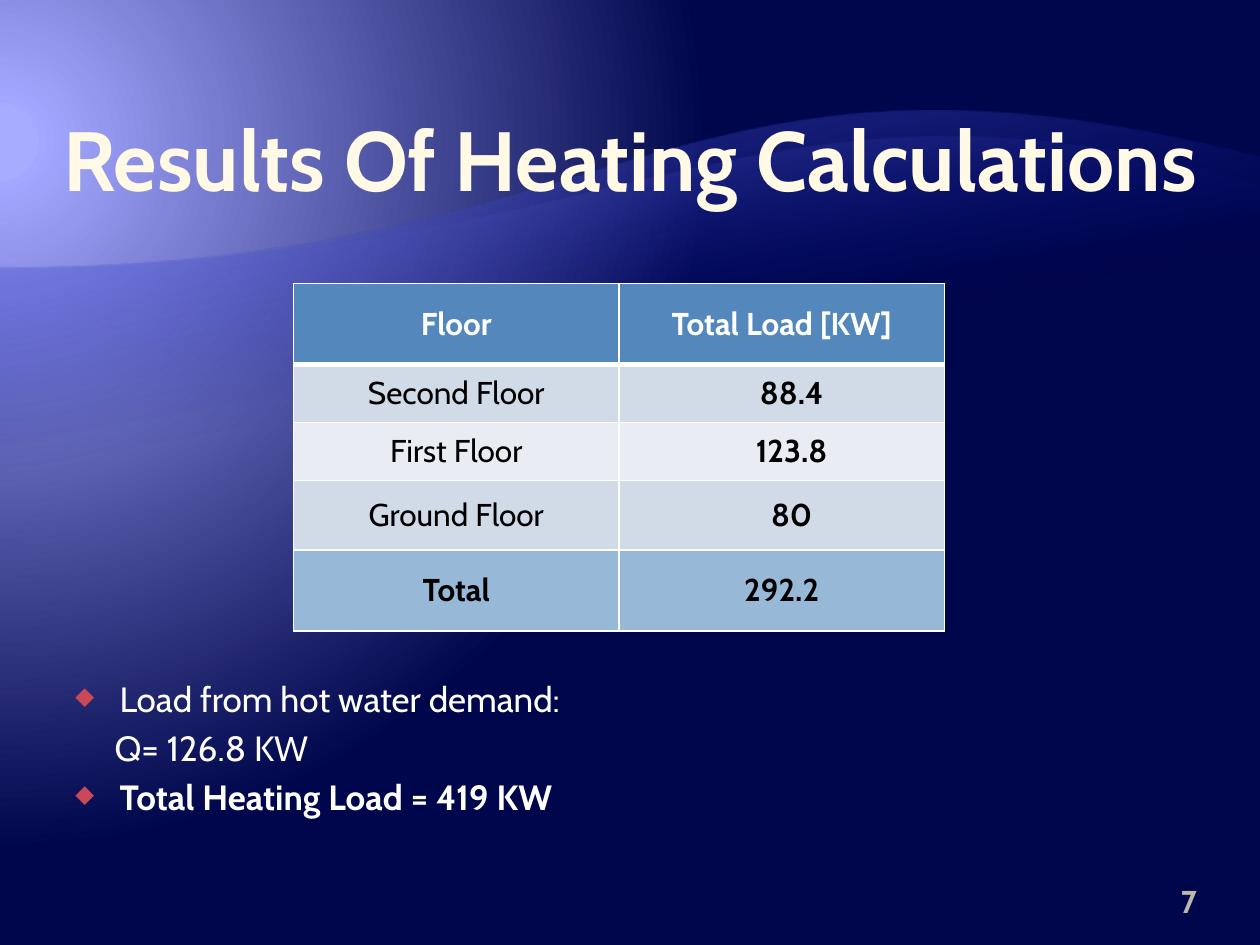
from lxml import etree
from pptx import Presentation
from pptx import util as u
from pptx.dml.color import RGBColor
from pptx.enum import text
from pptx.oxml import parse_xml
from pptx.oxml.ns import nsdecls, qn

Cm, Pt = u.Cm, u.Pt
FONT = "Cabin"
COLORS = {
    "glow": "A8ACFF", "halo": "A3A7FF", "night": "00064B",
    "wave": "000D9E", "crest": "797FFF",
    "title": "FFF9E5", "number": "BDB8A9", "bullet": "CC4757",
    "white": "FFFFFF", "black": "000000",
    "header": "5488BC", "band": "D1DAE7", "plain": "E9EDF3", "total": "98B8D7",
}


def gradient(stops, direction):
    """Return a gradFill from (position %, colour name, opacity %) stops."""
    stop_xml = "".join(
        f'<a:gs pos="{position * 1000}"><a:srgbClr val="{COLORS[name]}">'
        f'<a:alpha val="{opacity * 1000}"/></a:srgbClr></a:gs>'
        for position, name, opacity in stops)
    return (f'<a:gradFill {nsdecls("a")} rotWithShape="1">'
            f'<a:gsLst>{stop_xml}</a:gsLst>{direction}</a:gradFill>')


def style(paragraph, size, color, bold=False, align=text.PP_ALIGN.LEFT):
    paragraph.alignment = align
    font = paragraph.font
    font.name, font.size, font.bold = FONT, Pt(size), bold
    font.color.rgb = RGBColor.from_string(COLORS[color])


presentation = Presentation()
presentation.slide_width, presentation.slide_height = Cm(25.4), Cm(19.05)
slide = presentation.slides.add_slide(presentation.slide_layouts[5])

# Background glow
glow = gradient(
    [(5, "glow", 100), (5, "halo", 100), (90, "night", 100)],
    '<a:path path="circle"><a:fillToRect l="20000" t="30000" r="135000" b="100000"/></a:path>')
slide.background.fill.solid()
background = slide.element.cSld.find(qn("p:bg")).find(qn("p:bgPr"))
background.replace(background[0], parse_xml(glow))

# Waves: a cubic curve along the top, straight sides below
waves = [
    ([(0, 5.41), (12.7, 5.41), (13.56, 0.13), (25.4, 3.18)], 18.62, "crest", 55),
    ([(0, 5.41), (12.7, 5.41), (15.19, 0.79), (25.4, 3.73)], 16.18, "halo", 30),
]
STEPS = 60
for index, (controls, bottom, color, opacity) in enumerate(waves):
    curve = []
    for step in range(STEPS + 1):
        t = step / STEPS
        weights = [(1 - t) ** 3, 3 * t * (1 - t) ** 2, 3 * t ** 2 * (1 - t), t ** 3]
        curve.append(tuple(Cm(sum(w * point[axis] for w, point in zip(weights, controls)))
                           for axis in (0, 1)))
    builder = slide.shapes.build_freeform(*curve[0])
    builder.add_line_segments(curve[1:] + [(Cm(25.4), Cm(bottom)), (0, Cm(bottom))])
    wave = builder.convert_to_shape()
    wave.shadow.inherit = False
    wave.line.fill.background()
    wave.fill.solid()
    properties = wave.element.spPr
    fill = gradient([(65, "wave", 0), (100, color, opacity)],
                    f'<a:lin ang="{260 * 60000}" scaled="0"/>')
    properties.replace(properties.find(qn("a:solidFill")), parse_xml(fill))
    slide.shapes.element.insert(2 + index, wave.element)

# Title
title = slide.shapes.title
title.left, title.top, title.width, title.height = Cm(1.27), 0, Cm(22.86), Cm(4.24)
frame = title.text_frame
frame.text = "Results Of Heating Calculations"
frame.auto_size = text.MSO_AUTO_SIZE.NONE
frame.vertical_anchor = text.MSO_ANCHOR.BOTTOM
frame.margin_left = frame.margin_right = 0
frame.margin_top = frame.margin_bottom = Cm(0.03)
style(frame.paragraphs[0], 48, "title", bold=True)

# Slide number
number = slide.shapes.add_textbox(Cm(22.66), Cm(17.65), Cm(1.47), Cm(1.02))
frame = number.text_frame
frame.text = "7"
frame.word_wrap = True
frame.vertical_anchor = text.MSO_ANCHOR.BOTTOM
frame.margin_right = 0
style(frame.paragraphs[0], 18, "number", bold=True, align=text.PP_ALIGN.RIGHT)

# Load table: labels, row height, fill, extra left margin of the value
rows = [
    ("Floor", "Total Load [KW]", 1.63, "header", 0),
    ("Second Floor", "88.4", 1.17, "band", 0.4),
    ("First Floor", "123.8", 1.17, "plain", 0.4),
    ("Ground Floor", "80", 1.4, "band", 0.4),
    ("Total", "292.2", 1.63, "total", 0),
]
table = slide.shapes.add_table(len(rows), 2, Cm(5.92), Cm(5.72), Cm(13.12), Cm(7)).table
for column in table.columns:
    column.width = Cm(6.56)
for row_index, (floor, load, height, fill_color, shift) in enumerate(rows):
    table.rows[row_index].height = Cm(height)
    for column_index, label in enumerate((floor, load)):
        cell = table.cell(row_index, column_index)
        cell.text = label
        cell.vertical_anchor = text.MSO_ANCHOR.MIDDLE
        cell.margin_left = Cm(0.25 + shift * column_index)
        cell.fill.solid()
        cell.fill.fore_color.rgb = RGBColor.from_string(COLORS[fill_color])
        style(cell.text_frame.paragraphs[0], 18,
              "white" if row_index == 0 else "black",
              bold=column_index == 1 or fill_color in ("header", "total"),
              align=text.PP_ALIGN.CENTER)
        for position, side in enumerate(("lnL", "lnR", "lnT", "lnB")):
            thick = (row_index, side) in ((0, "lnB"), (1, "lnT"))
            cell_properties = cell._tc.get_or_add_tcPr()
            cell_properties.insert(position, parse_xml(
                f'<a:{side} {nsdecls("a")} w="{Pt(3 if thick else 1)}"><a:solidFill>'
                f'<a:srgbClr val="{COLORS["white"]}"/></a:solidFill></a:{side}>'))

# Notes below the table: wording, bold, bulleted
notes = [
    ("Load from hot water demand:", False, True),
    ("Q= 126.8 KW", False, False),
    ("Total Heating Load = 419 KW", True, True),
]
frame = slide.shapes.add_textbox(Cm(1.27), Cm(13.54), Cm(13.77), Cm(4.01)).text_frame
frame.word_wrap = True
for index, (wording, bold, bulleted) in enumerate(notes):
    paragraph = frame.paragraphs[0] if index == 0 else frame.add_paragraph()
    paragraph.text = wording
    style(paragraph, 20, "white", bold=bold)
    paragraph.space_before = Pt(4)
    properties = paragraph._p.get_or_add_pPr()
    properties.set("marL", str(Cm(0.89 if bulleted else 0.79)))
    properties.set("indent", str(Cm(-0.89 if bulleted else 0)))
    if bulleted:
        bullet_parts = [
            f'<a:buClr {nsdecls("a")}><a:srgbClr val="{COLORS["bullet"]}"/></a:buClr>',
            f'<a:buSzPct {nsdecls("a")} val="70000"/>',
            f'<a:buChar {nsdecls("a")} char="◆"/>',
        ]
        default_run = properties.find(qn("a:defRPr"))
        for part in bullet_parts:
            default_run.addprevious(etree.fromstring(part))

presentation.save("out.pptx")
